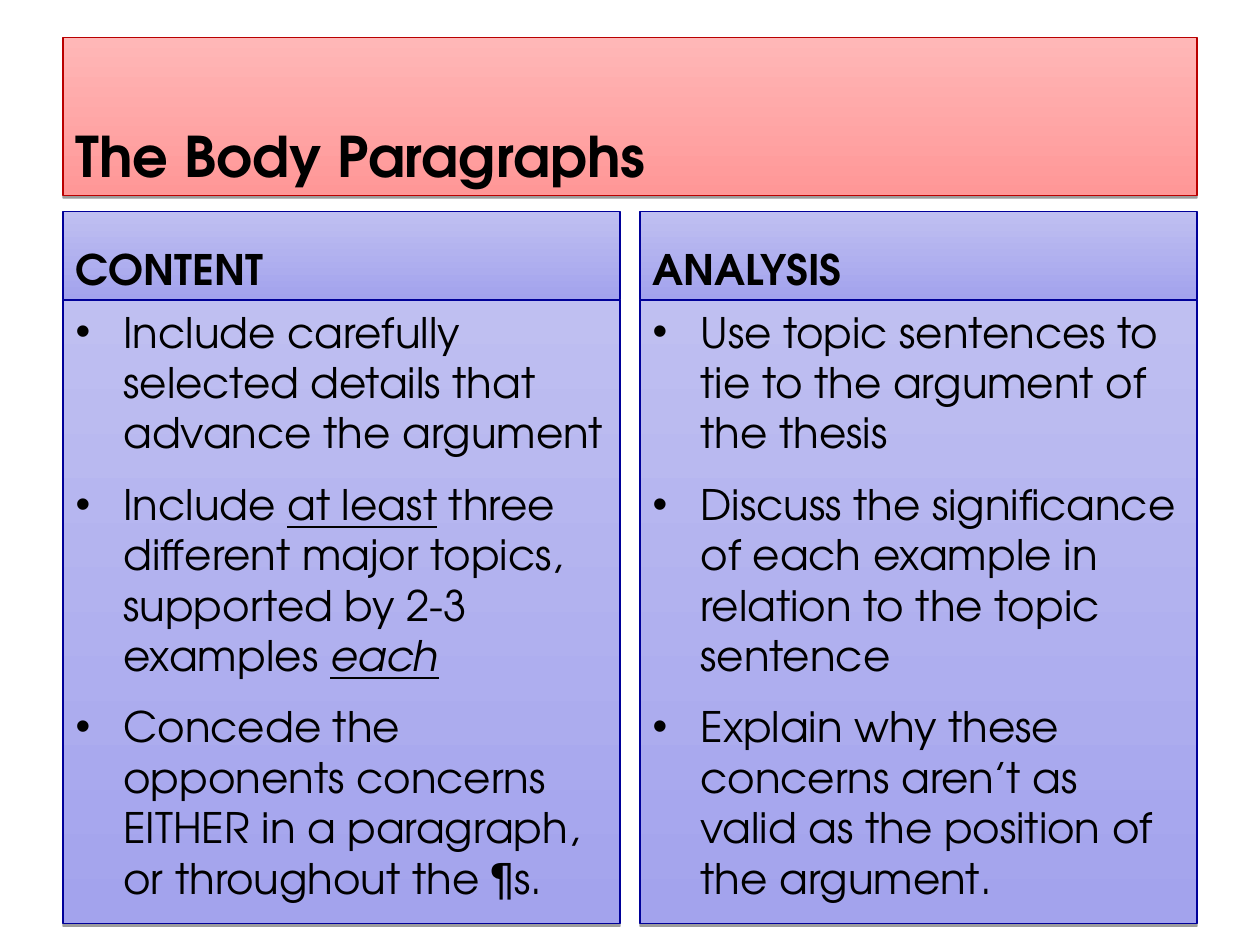
import pptx
import pptx.dml.color
import pptx.enum.text
import pptx.oxml
import pptx.oxml.ns
import pptx.util
from pptx.util import Inches

FONT = "TeX Gyre Adventor"
COLORS = {
    "text": "000000",
    "red_dark": "FF9797", "red_light": "FFB7B7", "red_line": "B90000",
    "blue_dark": "A3A3ED", "blue_light": "BFBFF1", "blue_line": "000099",
}
ANCHOR = pptx.enum.text.MSO_ANCHOR

# Each bullet is a list of (text, style) runs: u underlines, i slants
CONTENT = [
    [("Include carefully selected details that advance the argument", "")],
    [("Include ", ""), ("at least", "u"),
     (" three different major topics, supported by 2-3 examples ", ""),
     ("each", "iu")],
    [("Concede the opponents concerns EITHER in a paragraph, "
      "or throughout the ¶s.", "")],
]
ANALYSIS = [
    [("Use topic sentences to tie to the argument of the thesis", "")],
    [("Discuss the significance of each example in relation to "
      "the topic sentence", "")],
    [("Explain why these concerns aren’t as valid as the position "
      "of the argument.", "")],
]


def rgb(name):
    return pptx.dml.color.RGBColor.from_string(COLORS[name])


def add_xml(parent, xml):
    ns = pptx.oxml.ns.nsdecls("a")
    parent.append(pptx.oxml.parse_xml(xml.replace(">", f" {ns}>", 1)))


def style_panel(sp, box, hue, anchor):
    """Place a placeholder in box with gradient, outline and soft shadow."""
    sp.left, sp.top, sp.width, sp.height = (Inches(v) for v in box)
    sp.fill.gradient()
    sp.fill.gradient_angle = 90
    for stop, shade in zip(sp.fill.gradient_stops, ("dark", "light")):
        stop.color.rgb = rgb(f"{hue}_{shade}")
    sp.line.color.rgb = rgb(f"{hue}_line")
    sp.line.width = pptx.util.Pt(0.75)
    add_xml(sp._element.spPr,
            '<a:effectLst><a:outerShdw blurRad="0" dist="20320" dir="5400000" '
            'rotWithShape="0"><a:srgbClr val="000000"><a:alpha val="38000"/>'
            '</a:srgbClr></a:outerShdw></a:effectLst>')
    tf = sp.text_frame
    tf.word_wrap = True
    tf.auto_size = pptx.enum.text.MSO_AUTO_SIZE.NONE
    tf.vertical_anchor = anchor
    return tf


def style_paragraph(p, size, bold=False, before=0):
    p.alignment = pptx.enum.text.PP_ALIGN.LEFT
    p.space_before = pptx.util.Pt(before)
    p.font.name = FONT
    p.font.size = pptx.util.Pt(size)
    p.font.bold = bold
    p.font.color.rgb = rgb("text")


def add_heading(sp, box, text, hue, size):
    tf = style_panel(sp, box, hue, ANCHOR.BOTTOM)
    tf.text = text
    style_paragraph(tf.paragraphs[0], size, bold=True)


def add_bullets(sp, box, bullets):
    tf = style_panel(sp, box, "blue", ANCHOR.TOP)
    for n, runs in enumerate(bullets):
        p = tf.add_paragraph() if n else tf.paragraphs[0]
        pPr = p._p.get_or_add_pPr()
        pPr.set("marL", str(Inches(0.38)))
        pPr.set("indent", str(-Inches(0.38)))
        add_xml(pPr, f'<a:buClr><a:srgbClr val="{COLORS["text"]}"/></a:buClr>')
        add_xml(pPr, '<a:buFont typeface="Arial"></a:buFont>')
        add_xml(pPr, '<a:buChar char="•"></a:buChar>')
        style_paragraph(p, 24, before=12 if n else 0)
        for text, style in runs:
            r = p.add_run()
            r.text = text
            if "u" in style:
                r.font.underline = True
            if "i" in style:
                r.font.italic = True


def add_column(heading_sp, body_sp, box, heading, bullets):
    """Heading band on top, bullet panel filling the rest of box."""
    left, top, width, height = box
    band = 0.7
    add_heading(heading_sp, (left, top, width, band), heading, "blue", 24)
    add_bullets(body_sp, (left, top + band, width, height - band), bullets)


def main():
    prs = pptx.Presentation()
    prs.slide_width, prs.slide_height = Inches(10), Inches(7.5)
    s = prs.slides.add_slide(prs.slide_layouts.get_by_name("Comparison"))
    ph = {sp.placeholder_format.idx: sp for sp in s.placeholders}

    # Title band
    margin, width, gap = 0.5, 9, 0.16
    add_heading(ph[0], (margin, 0.3, width, 1.25),
                "The Body Paragraphs", "red", 32)

    # Two equal columns
    col_w = (width - gap) / 2
    columns = [("CONTENT", CONTENT), ("ANALYSIS", ANALYSIS)]
    for n, (heading, bullets) in enumerate(columns):
        box = (margin + n * (col_w + gap), 1.68, col_w, 5.65)
        add_column(ph[1 + 2 * n], ph[2 + 2 * n], box, heading, bullets)

    prs.save("out.pptx")


if __name__ == "__main__":
    main()
